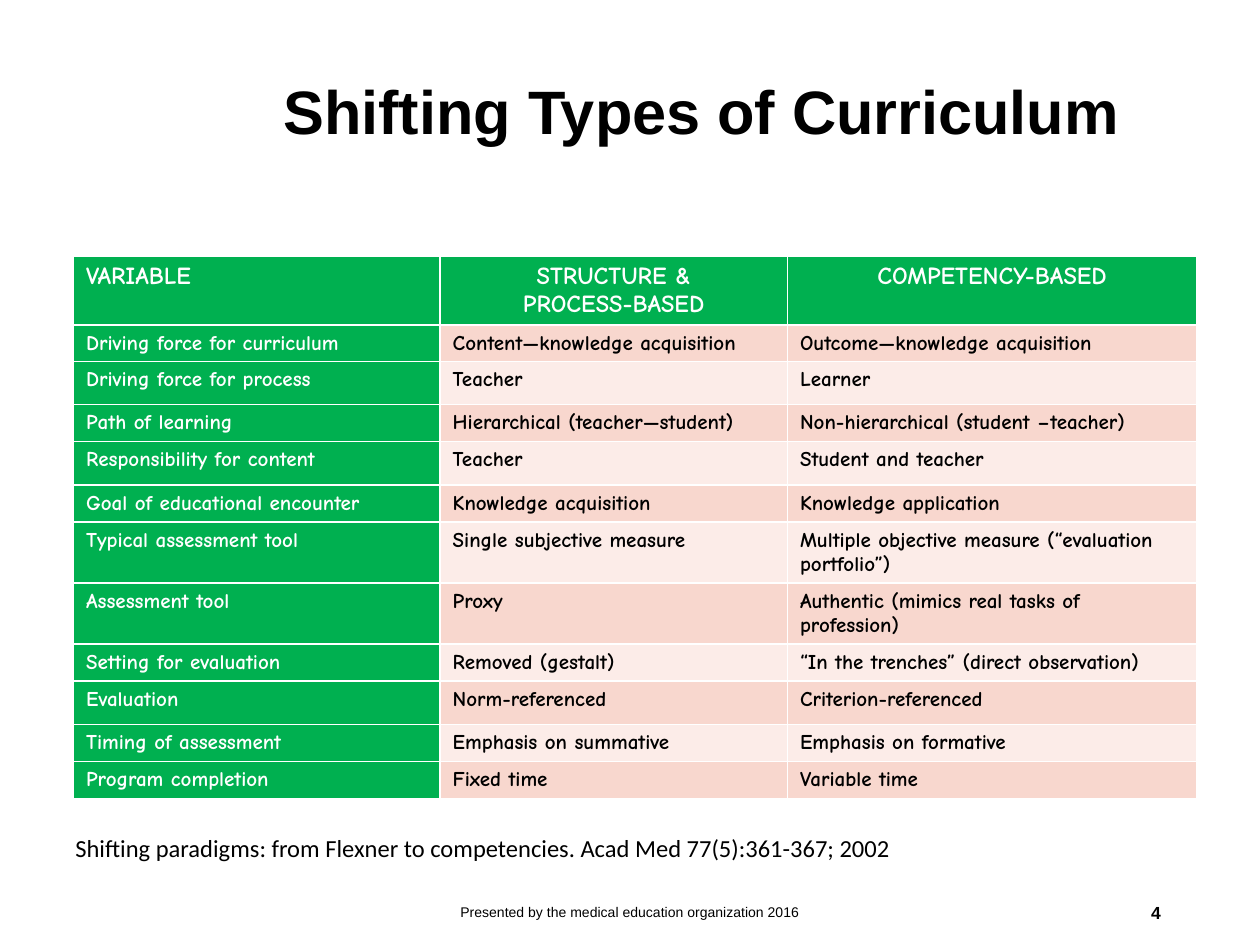
from pptx import Presentation
from pptx import util as u
from pptx.dml import color
from pptx.enum import text

Pt = u.Pt
LEFT, MID, RIGHT = text.PP_ALIGN.LEFT, text.PP_ALIGN.CENTER, text.PP_ALIGN.RIGHT


def paint(item, shade):
    item.rgb = color.RGBColor.from_string(shade)


def style(frame, face, size, shade, bold, align):
    for para in frame.paragraphs:
        para.alignment = align
        for run in para.runs:
            run.font.name = face
            run.font.size = Pt(size)
            run.font.bold = bold
            paint(run.font.color, shade)


deck = Presentation()
deck.slide_width, deck.slide_height = Pt(720), Pt(540)
slide = deck.slides.add_slide(deck.slide_layouts[6])

rows = [
    ("VARIABLE", "STRUCTURE &\nPROCESS-BASED", "COMPETENCY-BASED"),
    ("Driving force for curriculum", "Content—knowledge acquisition", "Outcome—knowledge acquisition"),
    ("Driving force for process", "Teacher", "Learner"),
    ("Path of learning", "Hierarchical (teacher—student)", "Non-hierarchical (student –teacher)"),
    ("Responsibility for content", "Teacher", "Student and teacher"),
    ("Goal of educational encounter", "Knowledge acquisition", "Knowledge application"),
    ("Typical assessment tool", "Single subjective measure", "Multiple objective measure (“evaluation portfolio”)"),
    ("Assessment tool", "Proxy", "Authentic (mimics real tasks of profession)"),
    ("Setting for evaluation", "Removed (gestalt)", "“In the trenches” (direct observation)"),
    ("Evaluation", "Norm-referenced", "Criterion-referenced"),
    ("Timing of assessment", "Emphasis on summative", "Emphasis on formative"),
    ("Program completion", "Fixed time", "Variable time"),
]
wide = [209.5, 198.5, 234]
high = [39, 21, 24.6, 21, 25, 21, 35, 34.3, 21, 25, 21, 21]

grid = slide.shapes.add_table(
    len(rows), len(wide), Pt(42), Pt(146.2), Pt(sum(wide)), Pt(sum(high))
).table
grid.first_col = True
for col, size in zip(grid.columns, wide):
    col.width = Pt(size)
for r, row in enumerate(rows):
    grid.rows[r].height = Pt(high[r])
    for c, words in enumerate(row):
        cell = grid.cell(r, c)
        head = r == 0 or c == 0
        cell.text_frame.text = words
        style(
            cell.text_frame, "Comic Neue", 14 if r == 0 else 12,
            "FFFFFF" if head else "000000", True,
            MID if r == 0 and c else LEFT,
        )
        cell.fill.solid()
        paint(cell.fill.fore_color, "00B050" if head else "F8D7CE" if r % 2 else "FCECE8")

notes = [
    ("Shifting Types of Curriculum", 154.8, 36, 529.2, 54, "Arial", 35, True, LEFT),
    ("Shifting paradigms: from Flexner to competencies. Acad Med 77(5):361-367; 2002",
     36, 472.3, 491.8, 24.5, "Calibri", 14, False, LEFT),
    ("Presented by the medical education organization 2016",
     238.3, 506.9, 243.4, 28.8, "Arial", 8, False, MID),
    ("4", 508.3, 506.9, 162, 28.8, "Arial", 10, True, RIGHT),
]
for words, x, y, w, h, face, size, bold, align in notes:
    frame = slide.shapes.add_textbox(Pt(x), Pt(y), Pt(w), Pt(h)).text_frame
    frame.word_wrap = True
    frame.vertical_anchor = text.MSO_ANCHOR.MIDDLE
    frame.text = words
    style(frame, face, size, "000000", bold, align)

deck.save("out.pptx")
